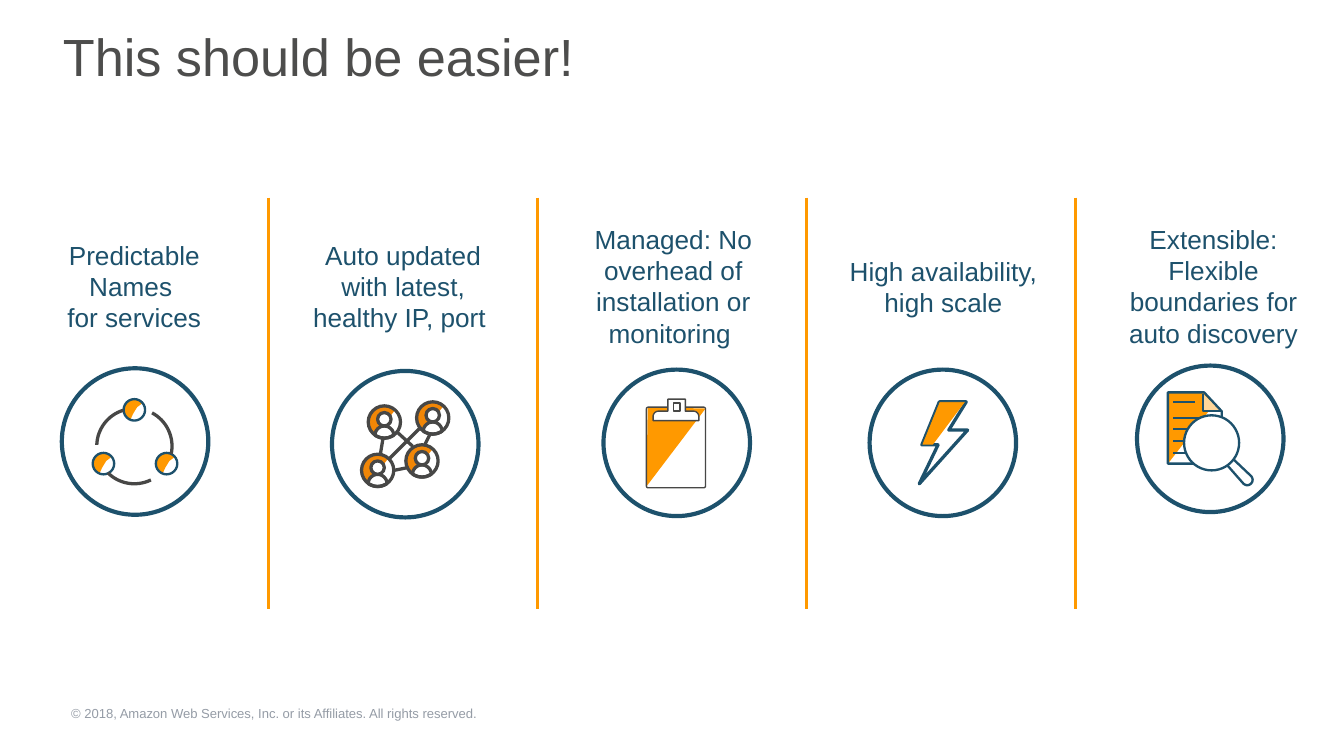
from dataclasses import dataclass
from math import cos, radians, sin
from typing import Callable, Optional

from lxml import etree
from pptx import Presentation
from pptx.dml.color import RGBColor
from pptx.enum.shapes import MSO_CONNECTOR, MSO_SHAPE
from pptx.enum.text import MSO_AUTO_SIZE, PP_ALIGN
from pptx.oxml.ns import qn
from pptx.util import Inches, Pt

LEFT, CENTER = PP_ALIGN.LEFT, PP_ALIGN.CENTER
GROW = MSO_AUTO_SIZE.SHAPE_TO_FIT_TEXT
OVAL, RECT, ROUNDED = MSO_SHAPE.OVAL, MSO_SHAPE.RECTANGLE, MSO_SHAPE.ROUNDED_RECTANGLE
STRAIGHT = MSO_CONNECTOR.STRAIGHT

Point = tuple[float, float]


@dataclass(frozen=True)
class Theme:
    font: str = "Arial"
    title_size: float = 28
    label_size: float = 14
    footer_size: float = 7
    title: str = "4D4D4C"
    footer: str = "959CA6"
    navy: str = "1D516C"
    orange: str = "FF9900"
    amber: str = "F18606"
    peach: str = "FFD699"
    gray: str = "474746"
    white: str = "FFFFFF"


T = Theme()


# Drawing helpers
def style(sp, fill: Optional[str], line: Optional[str], width: float) -> None:
    sp.shadow.inherit = False
    if fill:
        sp.fill.solid()
        sp.fill.fore_color.rgb = RGBColor.from_string(fill)
    else:
        sp.fill.background()
    if line:
        sp.line.color.rgb = RGBColor.from_string(line)
        sp.line.width = Pt(width)
    else:
        sp.line.fill.background()


def add_box(shapes, kind, x: float, y: float, w: float, h: float,
            fill: Optional[str] = None, line: Optional[str] = None, width: float = 1):
    sp = shapes.add_shape(kind, Inches(x), Inches(y), Inches(w), Inches(h))
    style(sp, fill, line, width)
    return sp


def add_circle(shapes, cx: float, cy: float, radius: float, fill: Optional[str] = None,
               line: Optional[str] = None, width: float = 1) -> None:
    add_box(shapes, OVAL, cx - radius, cy - radius, 2 * radius, 2 * radius, fill, line, width)


def add_path(shapes, points: list[Point], fill: Optional[str] = None,
             line: Optional[str] = None, width: float = 1, close: bool = True) -> None:
    start, *rest = [(Inches(x), Inches(y)) for x, y in points]
    builder = shapes.build_freeform(*start, scale=1.0)
    builder.add_line_segments(rest, close=close)
    style(builder.convert_to_shape(), fill, line, width)


def add_line(shapes, start: Point, end: Point, color: str, width: float) -> None:
    cx = shapes.add_connector(STRAIGHT, *(Inches(v) for v in start + end))
    cx.line.color.rgb = RGBColor.from_string(color)
    cx.line.width = Pt(width)
    etree.SubElement(cx._element.spPr, qn("a:effectLst"))


def arc(cx: float, cy: float, radius: float, start: float, end: float) -> list[Point]:
    """Points on a circle; degrees run clockwise from the right."""
    steps = 16
    angles = [radians(start + (end - start) * i / steps) for i in range(steps + 1)]
    return [(cx + radius * cos(a), cy + radius * sin(a)) for a in angles]


def add_text(shapes, text: str, x: float, y: float, w: float, h: float, size: float,
             color: str, align=LEFT, inset: bool = True):
    sp = shapes.add_textbox(Inches(x), Inches(y), Inches(w), Inches(h))
    tf = sp.text_frame
    tf.word_wrap = True
    if not inset:
        tf.margin_left = tf.margin_right = tf.margin_top = tf.margin_bottom = 0
    p = tf.paragraphs[0]
    p.alignment = align
    for i, part in enumerate(text.split("\n")):
        if i:
            p.add_line_break()
        r = p.add_run()
        r.text = part
        r.font.name = T.font
        r.font.size = Pt(size)
        r.font.color.rgb = RGBColor.from_string(color)
    return tf


# Icons
def draw_cycle(shapes) -> None:
    for cx, cy in [(0.77, 3.45), (1, 3.05), (1.24, 3.45)]:
        add_circle(shapes, cx, cy, 0.08, T.white)
        inner = [(cx - 0.01, cy + 0.03), (cx + 0.02, cy - 0.02)]
        add_path(shapes, arc(cx, cy, 0.08, -40, -248) + inner, T.orange)
        add_circle(shapes, cx, cy, 0.08, line=T.navy, width=1.25)
    for start, end in [(64, 135), (-62, 12), (182, 253)]:
        add_path(shapes, arc(1, 3.32, 0.28, start, end), line=T.gray, width=1.75, close=False)


def draw_network(shapes) -> None:
    links = [((2.83, 3.38), (2.85, 3.26)), ((2.93, 3.5), (3.03, 3.48)),
             ((3.16, 3.31), (3.2, 3.23)), ((2.96, 3.22), (3.07, 3.32)),
             ((3.13, 3.18), (2.89, 3.42))]
    for start, end in links:
        add_line(shapes, start, end, T.gray, 1.75)
    for cx, cy in [(2.81, 3.5), (2.86, 3.14), (3.14, 3.43), (3.22, 3.11)]:
        add_path(shapes, arc(cx, cy, 0.12, -48, -235), T.amber)
        body = arc(cx, cy + 0.1, 0.07, 180, 360) + arc(cx, cy, 0.12, 55, 125)
        add_path(shapes, body, T.white, T.gray, 1.75)
        add_circle(shapes, cx, cy - 0.02, 0.05, T.white, T.gray, 1.75)
        add_circle(shapes, cx, cy, 0.12, line=T.gray, width=1.75)


def draw_clipboard(shapes) -> None:
    add_path(shapes, [(5.25, 3.04), (4.82, 3.03), (4.81, 3.62)], T.orange)
    board = add_box(shapes, ROUNDED, 4.81, 3.03, 0.44, 0.6, line=T.gray, width=0.75)
    board.adjustments[0] = 0.03
    clip = ([(4.97, 2.97), (5.1, 2.97), (5.1, 3.06)] + arc(5.16, 3.1, 0.04, -90, 0)
            + [(5.2, 3.13), (4.86, 3.13)] + arc(4.9, 3.1, 0.04, 180, 270) + [(4.97, 3.06)])
    add_path(shapes, clip, T.white, T.gray, 0.75)
    add_box(shapes, RECT, 5.01, 3, 0.05, 0.06, line=T.gray, width=0.75)


def draw_bolt(shapes) -> None:
    bolt = [(7.2, 3.2), (7.06, 3.2), (7.19, 2.99), (6.99, 2.99),
            (6.86, 3.31), (6.98, 3.31), (6.84, 3.6)]
    add_path(shapes, bolt, T.white, T.navy, 1.75)
    add_path(shapes, [(6.99, 2.99), (7.18, 2.99), (6.94, 3.31), (6.86, 3.31)], T.orange)
    add_path(shapes, bolt, line=T.navy, width=0.25)


def draw_search(shapes) -> None:
    add_box(shapes, RECT, 8.68, 3.18, 0.42, 0.25, T.white)
    add_path(shapes, [(8.69, 2.92), (8.96, 2.92), (9.04, 3), (8.69, 3.45)], T.orange)
    add_path(shapes, [(8.95, 2.93), (8.95, 3.06), (9.09, 3.06)], T.peach, T.navy, 1.25, False)
    page = [(9.09, 3.06), (8.96, 2.92), (8.69, 2.92), (8.69, 3.45), (9.09, 3.45)]
    add_path(shapes, page, line=T.navy, width=1.25)
    for y, right in [(2.99, 8.89), (3.11, 9.04), (3.19, 9.04), (3.28, 9.04), (3.37, 9.04)]:
        add_line(shapes, (8.73, y), (right, y), T.navy, 1.25)
    add_box(shapes, OVAL, 8.81, 3.09, 0.41, 0.41, T.white, T.navy, 1.25)
    handle = [(9.13, 3.46)] + arc(9.28, 3.57, 0.04, 135, -45) + [(9.18, 3.42)]
    add_path(shapes, handle, line=T.navy, width=1.25, close=False)


# Columns
@dataclass(frozen=True)
class Benefit:
    label: str
    label_at: Point
    label_height: float
    ring: Point
    draw_icon: Callable


BENEFITS = [
    Benefit("Predictable Names \nfor services", (0.13, 1.73), 0.81, (0.46, 2.74), draw_cycle),
    Benefit("Auto updated with latest, healthy IP, port ", (2.13, 1.73), 0.81,
            (2.47, 2.76), draw_network),
    Benefit("Managed: No overhead of installation or monitoring ", (4.14, 1.61), 1.04,
            (4.49, 2.75), draw_clipboard),
    Benefit("High availability, high scale", (6.15, 1.85), 0.57, (6.47, 2.75), draw_bolt),
    Benefit("Extensible: Flexible boundaries for auto discovery", (8.16, 1.61), 1.04,
            (8.46, 2.72), draw_search),
]


def add_benefit(shapes, benefit: Benefit) -> None:
    tf = add_text(shapes, benefit.label, *benefit.label_at, 1.74, benefit.label_height,
                  T.label_size, T.navy, CENTER)
    tf.auto_size = GROW
    icon = shapes.add_group_shape().shapes
    benefit.draw_icon(icon)
    add_box(icon, OVAL, *benefit.ring, 1.09, 1.09, line=T.navy, width=2.25)


def main() -> None:
    prs = Presentation()
    prs.slide_width = Inches(10)
    prs.slide_height = Inches(10 * 9 / 16)
    s = prs.slides.add_slide(prs.slide_layouts[6])

    # Footer and title
    add_text(s.shapes, "© 2018, Amazon Web Services, Inc. or its Affiliates. All rights reserved.",
             0.53, 5.25, 3.31, 0.12, T.footer_size, T.footer, inset=False)
    add_text(s.shapes, "This should be easier!", 0.37, 0.13, 8.97, 0.6, T.title_size, T.title)

    # Dividers and benefits
    for x in range(2, 10, 2):
        add_line(s.shapes, (x, 1.47), (x, 4.53), T.orange, 1.5)
    for benefit in BENEFITS:
        add_benefit(s.shapes, benefit)

    prs.save("out.pptx")


if __name__ == "__main__":
    main()
